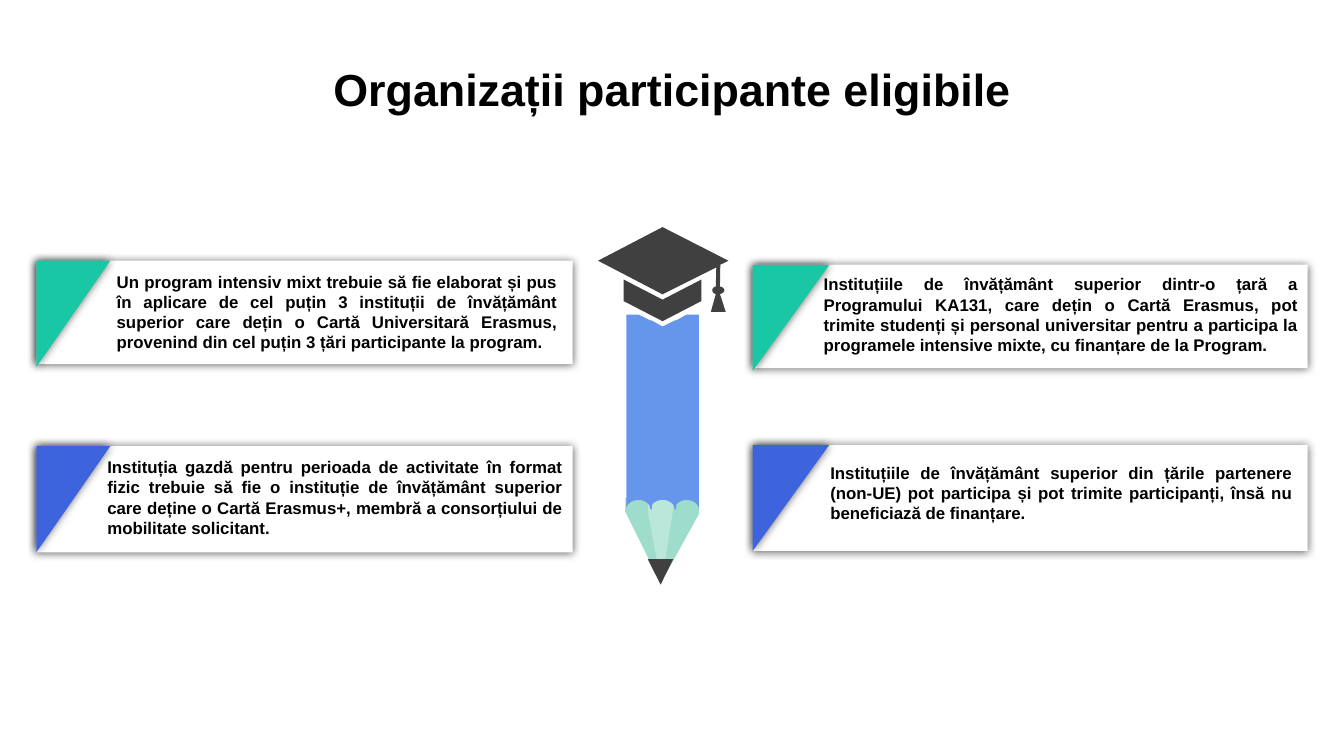
from math import cos, radians, sin

from lxml import etree
from pptx import Presentation
from pptx.dml.color import RGBColor
from pptx.enum.shapes import MSO_SHAPE as Shape
from pptx.enum.text import MSO_ANCHOR as Anchor, MSO_AUTO_SIZE as Fit, PP_ALIGN as Align
from pptx.oxml.ns import qn
from pptx.util import Inches, Pt

INK, GREEN, BLUE = "404040", "1AC7A4", "3D63DD"

# Card box, corner width, colour, text box, text
CARDS = [
    ((0.27, 1.94, 3.99, 0.77), 0.55, GREEN, (0.77, 1.97, 3.47, 0.71),
     "Un program intensiv mixt trebuie să fie elaborat și pus în aplicare de cel "
     "puțin 3 instituții de învățământ superior care dețin o Cartă Universitară "
     "Erasmus, provenind din cel puțin 3 țări participante la program."),
    ((0.27, 3.32, 3.99, 0.79), 0.55, BLUE, (0.7, 3.35, 3.58, 0.71),
     "Instituția gazdă pentru perioada de activitate în format fizic trebuie să "
     "fie o instituție de învățământ superior care deține o Cartă Erasmus+, "
     "membră a consorțiului de mobilitate solicitant."),
    ((5.6, 1.97, 4.13, 0.77), 0.57, GREEN, (6.03, 1.99, 3.72, 0.71),
     "Instituțiile de învățământ superior dintr-o țară a Programului KA131, care "
     "dețin o Cartă Erasmus, pot trimite studenți și personal universitar pentru "
     "a participa la programele intensive mixte, cu finanțare de la Program."),
    ((5.6, 3.31, 4.13, 0.79), 0.57, BLUE, (6.08, 3.39, 3.63, 0.79),
     "Instituțiile de învățământ superior din țările partenere (non-UE) pot "
     "participa și pot trimite participanți, însă nu beneficiază de finanțare."),
]


def color(code):
    return RGBColor.from_string(code)


def paint(shape, code):
    shape.shadow.inherit = False
    shape.fill.solid()
    shape.fill.fore_color.rgb = color(code)
    shape.line.fill.background()
    return shape


def add_box(shapes, kind, box, code, turn=0):
    shape = paint(shapes.add_shape(kind, *map(Inches, box)), code)
    shape.rotation = turn
    return shape


def add_glow(shape):
    """Give the shape a soft, centred shadow."""
    effects = shape._element.spPr.find(qn("a:effectLst"))
    outer = etree.SubElement(effects, qn("a:outerShdw"), blurRad=str(Pt(5)),
                             dist="0", dir="0", algn="ctr", rotWithShape="0")
    tint = etree.SubElement(outer, qn("a:srgbClr"), val="000000")
    etree.SubElement(tint, qn("a:alpha"), val="60000")


def add_text(shapes, box, text, size, align):
    frame = shapes.add_textbox(*map(Inches, box)).text_frame
    frame.word_wrap = True
    para = frame.paragraphs[0]
    para.text = text
    para.alignment = align
    font = para.font
    font.name, font.size, font.bold = "Arial", Pt(size), True
    font.color.rgb = color("000000")
    return frame


def arc(x, y, wide, high, start, end, steps=16):
    """Points on an ellipse, angles running clockwise from the right."""
    turns = [radians(start + (end - start) * i / steps) for i in range(steps + 1)]
    return [(x + wide * cos(t), y + high * sin(t)) for t in turns]


def add_path(shapes, code, *loops):
    loops = [[(Inches(x), Inches(y)) for x, y in loop] for loop in loops]
    build = shapes.build_freeform(*loops[0][0], scale=1.0)
    build.add_line_segments(loops[0][1:], close=True)
    for loop in loops[1:]:
        build.move_to(*loop[0])
        build.add_line_segments(loop[1:], close=True)
    return paint(build.convert_to_shape(), code)


def add_pencil(slide):
    shapes = slide.shapes.add_group_shape().shapes
    # Wooden tip
    wood = add_path(shapes, "9EDDCB", [(4.65, 3.71), (5.2, 3.72), (5.2, 3.82),
                                       (4.92, 4.34), (4.65, 3.81)])
    wood.rotation = 0.6
    add_path(shapes, "BAE7DA", [(4.82, 3.71), (5.01, 3.71), (5.01, 3.78),
                                (4.92, 4.34), (4.82, 3.81)])
    # Three strips with scalloped ends, overlapping a little to hide the seams
    tops = [[(4.66, 2.34), (4.75, 2.34), (4.85, 2.39)],
            [(4.84, 2.38), (4.93, 2.43), (5.03, 2.38)],
            [(5.02, 2.39), (5.11, 2.34), (5.2, 2.34)]]
    for i, top in enumerate(tops):
        edge = (top[-1][0], 3.79)
        scallop = arc(4.75 + 0.18 * i, 3.79, 0.09, 0.07, 0, -180)
        add_path(shapes, "6696EC", [*top, edge, *scallop])
    # Lead
    add_box(shapes, Shape.ISOSCELES_TRIANGLE, (4.82, 4.16, 0.19, 0.19), INK, 180)
    # Graduation cap with tassel
    band = [(4.64, 2.08), (4.93, 2.23), (5.22, 2.08),
            (5.22, 2.24), (4.93, 2.39), (4.64, 2.24)]
    board = [(4.93, 1.69), (5.42, 1.94), (5.36, 1.97),
             *arc(5.34, 2.16, 0.05, 0.03, -70, 70), (5.4, 2.32), (5.29, 2.32),
             *arc(5.34, 2.16, 0.04, 0.03, 110, 250), (5.33, 1.99),
             (4.93, 2.19), (4.45, 1.94)]
    add_path(shapes, INK, band, board)


def add_card(slide, box, wide, code, area, text):
    left, top = box[:2]
    shapes = slide.shapes.add_group_shape().shapes
    add_glow(add_box(shapes, Shape.RECTANGLE, box, "FFFFFF"))
    # A quarter turn swaps the sides of the corner around its centre
    tall = 0.79
    shift = (tall - wide) / 2
    corner = (left - shift, top + shift, tall, wide)
    add_glow(add_box(shapes, Shape.RIGHT_TRIANGLE, corner, code, 90))
    frame = add_text(slide.shapes, area, text, 9, Align.JUSTIFY)
    frame.auto_size = Fit.SHAPE_TO_FIT_TEXT


def add_title(slide):
    frame = add_text(slide.shapes, (0, 0.4, 10, 0.97),
                     "Organizații participante eligibile", 24, Align.CENTER)
    frame.vertical_anchor = Anchor.TOP
    frame.margin_top = Inches(0.06)


def main():
    deck = Presentation()
    deck.slide_width = Inches(10)
    deck.slide_height = deck.slide_width * 9 // 16
    slide = deck.slides.add_slide(deck.slide_layouts[6])
    add_title(slide)
    add_pencil(slide)
    for card in CARDS:
        add_card(slide, *card)
    deck.save("out.pptx")


if __name__ == "__main__":
    main()
